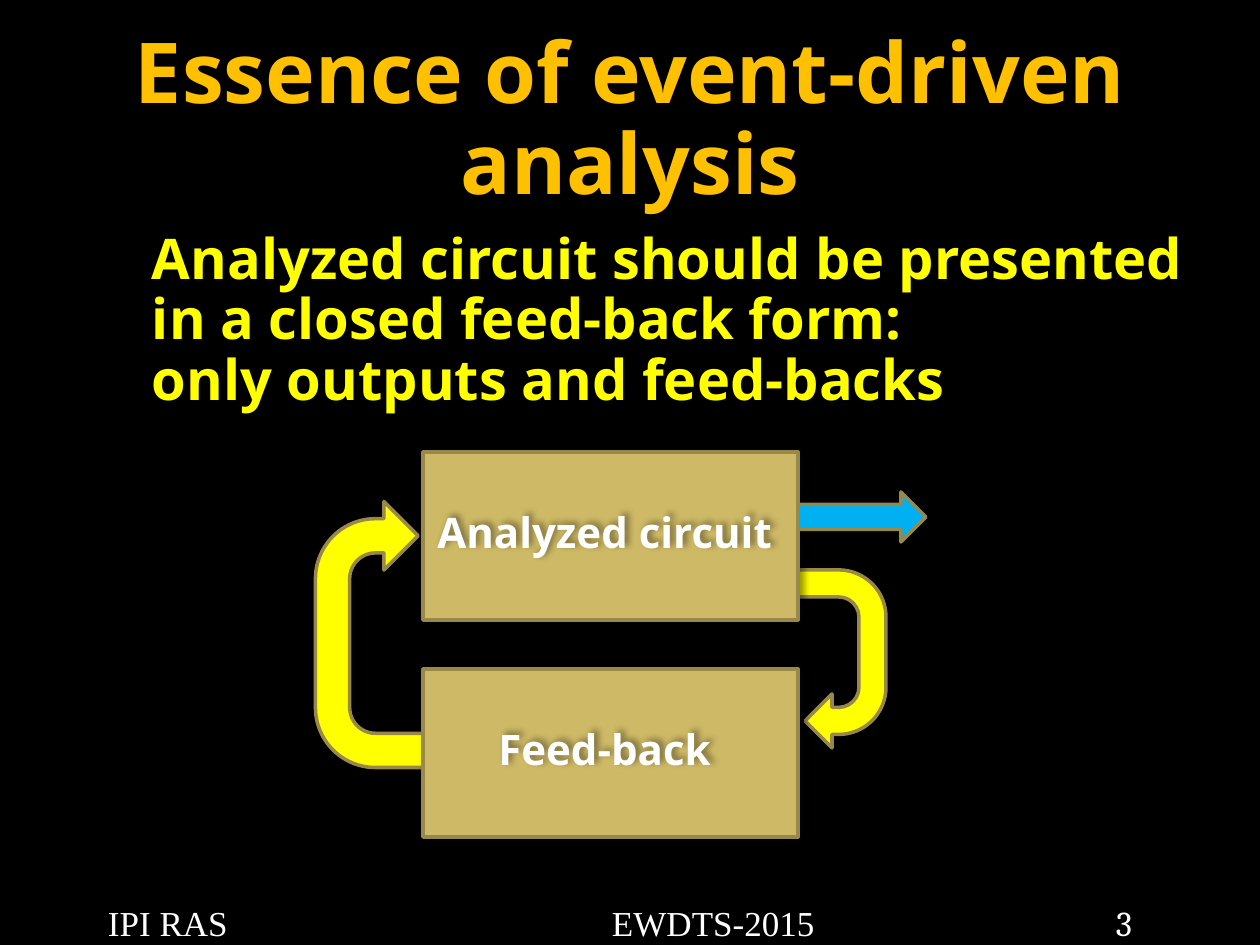
import pptx
import pptx.util
import pptx.dml.color
import pptx.enum.shapes
import pptx.enum.text
import pptx.oxml
from dataclasses import dataclass

SHAPE = pptx.enum.shapes.MSO_SHAPE
ALIGN = pptx.enum.text.PP_ALIGN
ANCHOR = pptx.enum.text.MSO_ANCHOR
NS = 'xmlns:a="http://schemas.openxmlformats.org/drawingml/2006/main"'
PX = 914400 // 126


@dataclass(frozen=True)
class Theme:
    background: str = "000000"
    title: str = "FFC000"
    body: str = "FFFF00"
    light: str = "FFFFFF"
    block: str = "CEB966"
    feedback: str = "FFFF00"
    output: str = "00B0F0"
    outline: str = "98894B"
    font: str = "Noto Sans"
    footer_font: str = "Times New Roman"
    number_font: str = "Cambria"
    title_size: int = 48
    body_size: int = 32
    label_size: int = 24
    footer_size: int = 20


THEME = Theme()
TITLE = "Essence of event-driven analysis"
BODY = "Analyzed circuit should be presented in a closed feed-back form: \vonly outputs and feed-backs"
FOOTER = [("IPI RAS\tEWDTS-2015\t", THEME.footer_font), ("3", THEME.number_font)]
FOOTER_STEP = 504
BLOCKS = ["Analyzed circuit", "Feed-back"]
BLOCK_LEFT, BLOCK_TOP, BLOCK_WIDTH, BLOCK_HEIGHT = 423, 452, 375, 168
BLOCK_STEP = 217
LABEL_LEFT, LABEL_OFFSET, LABEL_WIDTH, LABEL_HEIGHT = 393, 49, 423, 61
FEEDBACK_ARROWS = [((743, 605, 178, 108), 90), ((251, 566, 266, 137), 270)]
OUTPUT_ARROW = (798, 492, 128, 50)


def px(*lengths):
    return [length * PX for length in lengths]


def rgb(color):
    return pptx.dml.color.RGBColor.from_string(color)


def set_font(font, name, size, color, bold):
    font.name, font.size, font.bold = name, pptx.util.Pt(size), bold
    font.color.rgb = rgb(color)


def add_text(parent, box, text, size, color, inset=(13, 6), align=ALIGN.CENTER,
             anchor=ANCHOR.TOP, spacing=0.9):
    frame = parent.add_textbox(*px(*box)).text_frame
    frame.word_wrap = True
    frame.vertical_anchor = anchor
    frame.margin_left = frame.margin_right = inset[0] * PX
    frame.margin_top = frame.margin_bottom = inset[1] * PX
    paragraph = frame.paragraphs[0]
    paragraph.text = text
    paragraph.alignment = align
    paragraph.line_spacing = spacing
    set_font(paragraph.font, THEME.font, size, color, True)
    return frame


def add_part(parent, kind, box, fill, rotation=0):
    part = parent.add_shape(kind, *px(*box))
    part.shadow.inherit = False
    part.rotation = rotation
    part.fill.solid()
    part.fill.fore_color.rgb = rgb(fill)
    part.line.color.rgb = rgb(THEME.outline)
    part.line.width = pptx.util.Pt(2)
    return part


def add_shadow(shape):
    shape.shadow.inherit = False
    effects = shape._element.spPr.find(pptx.oxml.ns.qn("a:effectLst"))
    effects.append(pptx.oxml.parse_xml(
        f'<a:outerShdw {NS} blurRad="50800" dist="38100" dir="18900000" algn="bl" rotWithShape="0">'
        '<a:srgbClr val="000000"><a:alpha val="40000"/></a:srgbClr></a:outerShdw>'))


def add_footer(slide):
    frame = slide.shapes.add_textbox(*px(108, 902, 1093, 41)).text_frame
    frame.word_wrap = True
    frame.margin_left = frame.margin_right = frame.margin_top = frame.margin_bottom = 0
    line = frame.paragraphs[0]
    stops = "".join(f'<a:tab pos="{FOOTER_STEP * n * PX}" algn="l"/>' for n in (1, 2))
    line._p.get_or_add_pPr().append(pptx.oxml.parse_xml(f"<a:tabLst {NS}>{stops}</a:tabLst>"))
    for text, font in FOOTER:
        run = line.add_run()
        run.text = text
        set_font(run.font, font, THEME.footer_size, THEME.light, False)


def add_diagram(slide):
    diagram = slide.shapes.add_group_shape().shapes
    for box, rotation in FEEDBACK_ARROWS:
        add_part(diagram, SHAPE.U_TURN_ARROW, box, THEME.feedback, rotation)
    for row, label in enumerate(BLOCKS):
        top = BLOCK_TOP + row * BLOCK_STEP
        block = add_part(diagram, SHAPE.RECTANGLE,
                         (BLOCK_LEFT, top, BLOCK_WIDTH, BLOCK_HEIGHT), THEME.block)
        add_shadow(block)
        add_text(diagram, (LABEL_LEFT, top + LABEL_OFFSET, LABEL_WIDTH, LABEL_HEIGHT), label,
                 THEME.label_size, THEME.light, (5, 5), anchor=ANCHOR.MIDDLE, spacing=1.0)
        add_shadow(diagram[-1])
    add_part(diagram, SHAPE.RIGHT_ARROW, OUTPUT_ARROW, THEME.output)


def main():
    deck = pptx.Presentation()
    deck.slide_width, deck.slide_height = px(1260, 945)
    slide = deck.slides.add_slide(deck.slide_layouts[6])
    slide.background.fill.solid()
    slide.background.fill.fore_color.rgb = rgb(THEME.background)
    add_text(slide.shapes, (63, 43, 1134, 157), TITLE, THEME.title_size, THEME.title,
             anchor=ANCHOR.MIDDLE)
    add_footer(slide)
    body = add_text(slide.shapes, (63, 225, 1134, 174), BODY, THEME.body_size, THEME.body,
                    align=ALIGN.LEFT)
    body.paragraphs[0]._p.get_or_add_pPr().set("marL", str(76 * PX))
    add_diagram(slide)
    deck.save("out.pptx")


if __name__ == "__main__":
    main()
